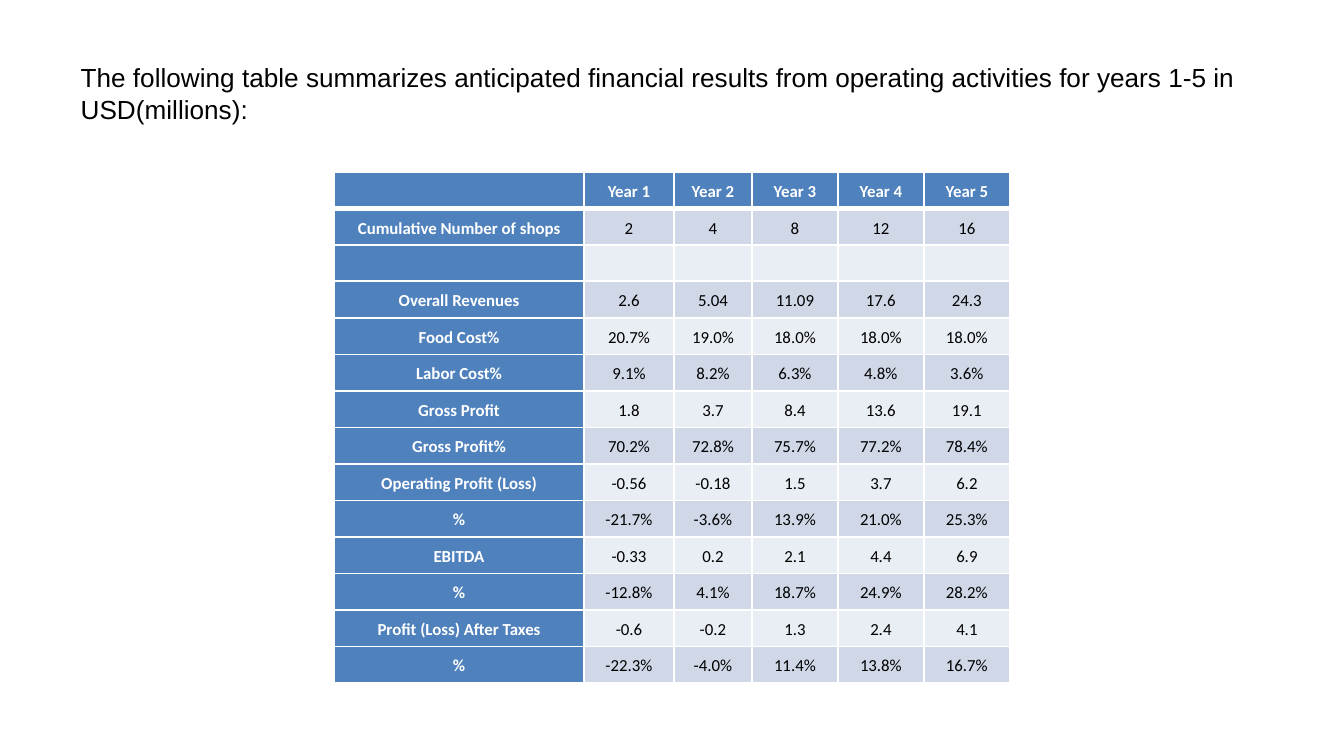
from lxml.etree import SubElement
from pptx import Presentation
from pptx.dml.color import RGBColor
from pptx.enum.text import MSO_ANCHOR, PP_ALIGN
from pptx.oxml.ns import qn
from pptx.util import Inches, Pt

SLIDE_WIDTH = 10
SLIDE_HEIGHT = SLIDE_WIDTH * 9 / 16
BLACK = RGBColor(0x00, 0x00, 0x00)
WHITE = RGBColor(0xFF, 0xFF, 0xFF)
BLUE = RGBColor(0x4F, 0x81, 0xBD)
BANDS = (RGBColor(0xE9, 0xED, 0xF4), RGBColor(0xD0, 0xD8, 0xE8))
CELL_MARGIN = Pt(3.5)

TITLE = ("The following table summarizes anticipated financial results "
         "from operating activities for years 1-5 in USD(millions):")
COLUMN_WIDTHS = (1.86, 0.67, 0.58, 0.64, 0.64, 0.64)
RESULTS = (
    ("", "Year 1", "Year 2", "Year 3", "Year 4", "Year 5"),
    ("Cumulative Number of shops", "2", "4", "8", "12", "16"),
    ("", "", "", "", "", ""),
    ("Overall Revenues", "2.6", "5.04", "11.09", "17.6", "24.3"),
    ("Food Cost%", "20.7%", "19.0%", "18.0%", "18.0%", "18.0%"),
    ("Labor Cost%", "9.1%", "8.2%", "6.3%", "4.8%", "3.6%"),
    ("Gross Profit", "1.8", "3.7", "8.4", "13.6", "19.1"),
    ("Gross Profit%", "70.2%", "72.8%", "75.7%", "77.2%", "78.4%"),
    ("Operating Profit (Loss)", "-0.56", "-0.18", "1.5", "3.7", "6.2"),
    ("%", "-21.7%", "-3.6%", "13.9%", "21.0%", "25.3%"),
    ("EBITDA", "-0.33", "0.2", "2.1", "4.4", "6.9"),
    ("%", "-12.8%", "4.1%", "18.7%", "24.9%", "28.2%"),
    ("Profit (Loss) After Taxes", "-0.6", "-0.2", "1.3", "2.4", "4.1"),
    ("%", "-22.3%", "-4.0%", "11.4%", "13.8%", "16.7%"),
)


def write_text(frame, text, font="Calibri", size=9, color=BLACK, bold=False,
               align=PP_ALIGN.CENTER, line_spacing=1.15, space_after=10):
    paragraph = frame.paragraphs[0]
    paragraph.alignment = align
    paragraph.line_spacing = line_spacing
    paragraph.space_after = Pt(space_after)
    if not text:
        # An empty paragraph still needs its size to keep the row height
        SubElement(paragraph._p, qn("a:endParaRPr"), sz=str(size * 100))
        return
    run = paragraph.add_run()
    run.text = text
    run.font.name = font
    run.font.size = Pt(size)
    run.font.bold = bold
    run.font.color.rgb = color


def set_borders(cell, left=1, right=1, top=1, bottom=1):
    properties = cell._tc.get_or_add_tcPr()
    sides = {"a:lnL": left, "a:lnR": right, "a:lnT": top, "a:lnB": bottom}
    for tag, width in sides.items():
        line = SubElement(properties, qn(tag), w=str(Pt(width)))
        fill = SubElement(line, qn("a:solidFill"))
        SubElement(fill, qn("a:srgbClr"), val=str(WHITE))


def place_title(slide, left, top, width, height):
    title = slide.shapes.title
    title.left, title.top = Inches(left), Inches(top)
    title.width, title.height = Inches(width), Inches(height)
    frame = title.text_frame
    frame.word_wrap = True
    frame.vertical_anchor = MSO_ANCHOR.MIDDLE
    write_text(frame, TITLE, font="Arial", size=14, align=PP_ALIGN.LEFT,
               line_spacing=1, space_after=0)


def place_results_table(slide, left, top, width, height):
    table = slide.shapes.add_table(
        len(RESULTS), len(COLUMN_WIDTHS),
        Inches(left), Inches(top), Inches(width), Inches(height)).table
    for column, share in zip(table.columns, COLUMN_WIDTHS):
        column.width = Inches(width * share / sum(COLUMN_WIDTHS))

    for row, values in enumerate(RESULTS):
        for column, text in enumerate(values):
            cell = table.cell(row, column)
            is_heading = row == 0 or column == 0
            # A heavier rule separates the years from the figures
            set_borders(cell, top=3 if row == 1 else 1,
                        bottom=3 if row == 0 else 1)
            cell.fill.solid()
            cell.fill.fore_color.rgb = BLUE if is_heading else BANDS[row % 2]
            cell.vertical_anchor = MSO_ANCHOR.MIDDLE
            cell.margin_left = cell.margin_right = CELL_MARGIN
            cell.margin_top = cell.margin_bottom = CELL_MARGIN
            write_text(cell.text_frame, text, bold=is_heading,
                       color=WHITE if is_heading else BLACK)


def main():
    presentation = Presentation()
    presentation.slide_width = Inches(SLIDE_WIDTH)
    presentation.slide_height = Inches(SLIDE_HEIGHT)
    slide = presentation.slides.add_slide(presentation.slide_layouts[5])

    # Title across the slide, table centred below it
    margin = SLIDE_WIDTH * 0.05
    place_title(slide, margin, SLIDE_HEIGHT * 0.04,
                SLIDE_WIDTH - 2 * margin, SLIDE_HEIGHT / 6)
    table_width = 5.03
    place_results_table(slide, (SLIDE_WIDTH - table_width) / 2, 1.28,
                        table_width, 3.78)
    presentation.save("out.pptx")


if __name__ == "__main__":
    main()
